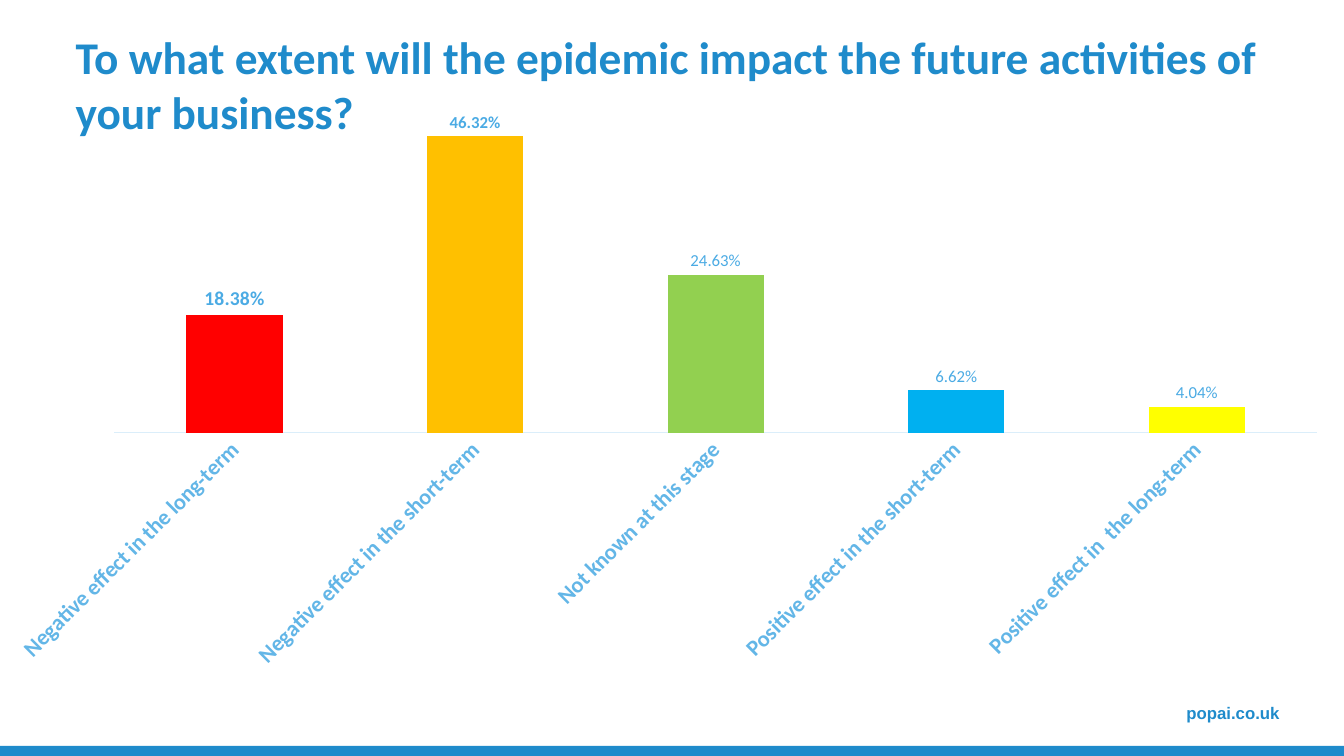
from pptx import Presentation
from pptx.chart import data
from pptx.dml.color import RGBColor
from pptx.enum import chart as ch, shapes, text
from pptx.oxml import parse_xml
from pptx.oxml.ns import nsdecls
from pptx.util import Inches, Pt

COLORS = {"blue": "1F8BCB", "axis_text": "63B6E7", "label": "4BABE4", "axis_line": "DBEEFA"}
BARS = [
    ("Negative effect in the long-term", 0.1838, "FF0000"),
    ("Negative effect in the short-term", 0.4632, "FFC000"),
    ("Not known at this stage", 0.2463, "92D050"),
    ("Positive effect in the short-term", 0.0662, "00B0F0"),
    ("Positive effect in\u00a0 the long-term", 0.0404, "FFFF00"),
]


def set_font(font, size, color, bold=False, name="Calibri"):
    font.name = name
    font.size = Pt(size)
    font.bold = bold
    font.color.rgb = RGBColor.from_string(COLORS[color])


def write(sp, content, size, align, anchor, name="Calibri"):
    tf = sp.text_frame
    tf.word_wrap = True
    tf.vertical_anchor = anchor
    p = tf.paragraphs[0]
    p.alignment = align
    r = p.add_run()
    r.text = content
    set_font(r.font, size, "blue", bold=True, name=name)


prs = Presentation()
prs.slide_width, prs.slide_height = Inches(13.33), Inches(7.5)
s = prs.slides.add_slide(prs.slide_layouts[5])

title = s.shapes.title
title.left, title.top, title.width, title.height = Inches(0.65), Inches(0.54), Inches(12), Inches(0.58)
write(title, "To what extent will the epidemic impact the future activities of your business?",
      32.4, text.PP_ALIGN.LEFT, text.MSO_ANCHOR.MIDDLE)

site = s.shapes.add_textbox(Inches(10.17), Inches(6.92), Inches(2.62), Inches(0.3))
write(site, "popai.co.uk", 12, text.PP_ALIGN.RIGHT, text.MSO_ANCHOR.TOP, name="Arial")

band = s.shapes.add_shape(shapes.MSO_SHAPE.RECTANGLE, 0, Inches(7.4), Inches(13.33), Inches(0.16))
band.shadow.inherit = False
band.fill.solid()
band.fill.fore_color.rgb = RGBColor.from_string(COLORS["blue"])
band.line.fill.background()

cd = data.CategoryChartData(number_format="0.00%")
cd.categories = [name for name, value, color in BARS]
cd.add_series("Series 1", [value for name, value, color in BARS])
chart = s.shapes.add_chart(ch.XL_CHART_TYPE.COLUMN_CLUSTERED, 0, Inches(1.01),
                           Inches(13.33), Inches(5.74), cd).chart
chart.has_legend = False
chart.has_title = False
set_font(chart.font, 10, "blue")

plot_area = chart._chartSpace.chart.plotArea
for old in plot_area.xpath("c:layout"):
    plot_area.remove(old)
plot_area.insert(0, parse_xml(
    f'<c:layout {nsdecls("c")}><c:manualLayout><c:layoutTarget val="inner"/>'
    '<c:xMode val="edge"/><c:yMode val="edge"/><c:x val="0.085"/><c:y val="0.019"/>'
    '<c:w val="0.895"/><c:h val="0.553"/></c:manualLayout></c:layout>'))

cat = chart.category_axis
cat.major_tick_mark = ch.XL_TICK_MARK.NONE
cat.format.line.color.rgb = RGBColor.from_string(COLORS["axis_line"])
cat.format.line.width = Pt(0.75)
set_font(cat.tick_labels.font, 16, "axis_text", bold=True)
cat._element.xpath("c:txPr/a:bodyPr")[0].set("rot", "-2700000")

val = chart.value_axis
val.minimum_scale, val.maximum_scale = 0, 0.5
val.has_major_gridlines = False
val.tick_labels.number_format = "0.00%"
val.tick_labels.number_format_is_linked = False
val.visible = False

plot = chart.plots[0]
plot.gap_width, plot.overlap = 150, -25
plot.vary_by_categories = False
series = plot.series[0]
labels = series.data_labels
labels.show_value = True
labels.number_format = "0.00%"
labels.number_format_is_linked = False
labels.position = ch.XL_LABEL_POSITION.OUTSIDE_END
set_font(labels.font, 12, "label")

for i, (name, value, color) in enumerate(BARS):
    fill = series.points[i].format.fill
    fill.solid()
    fill.fore_color.rgb = RGBColor.from_string(color)

for i, size in enumerate((14, 12)):
    label = series.points[i].data_label
    set_font(label.font, size, "label", bold=True)
    label.position = ch.XL_LABEL_POSITION.OUTSIDE_END

prs.save("out.pptx")
